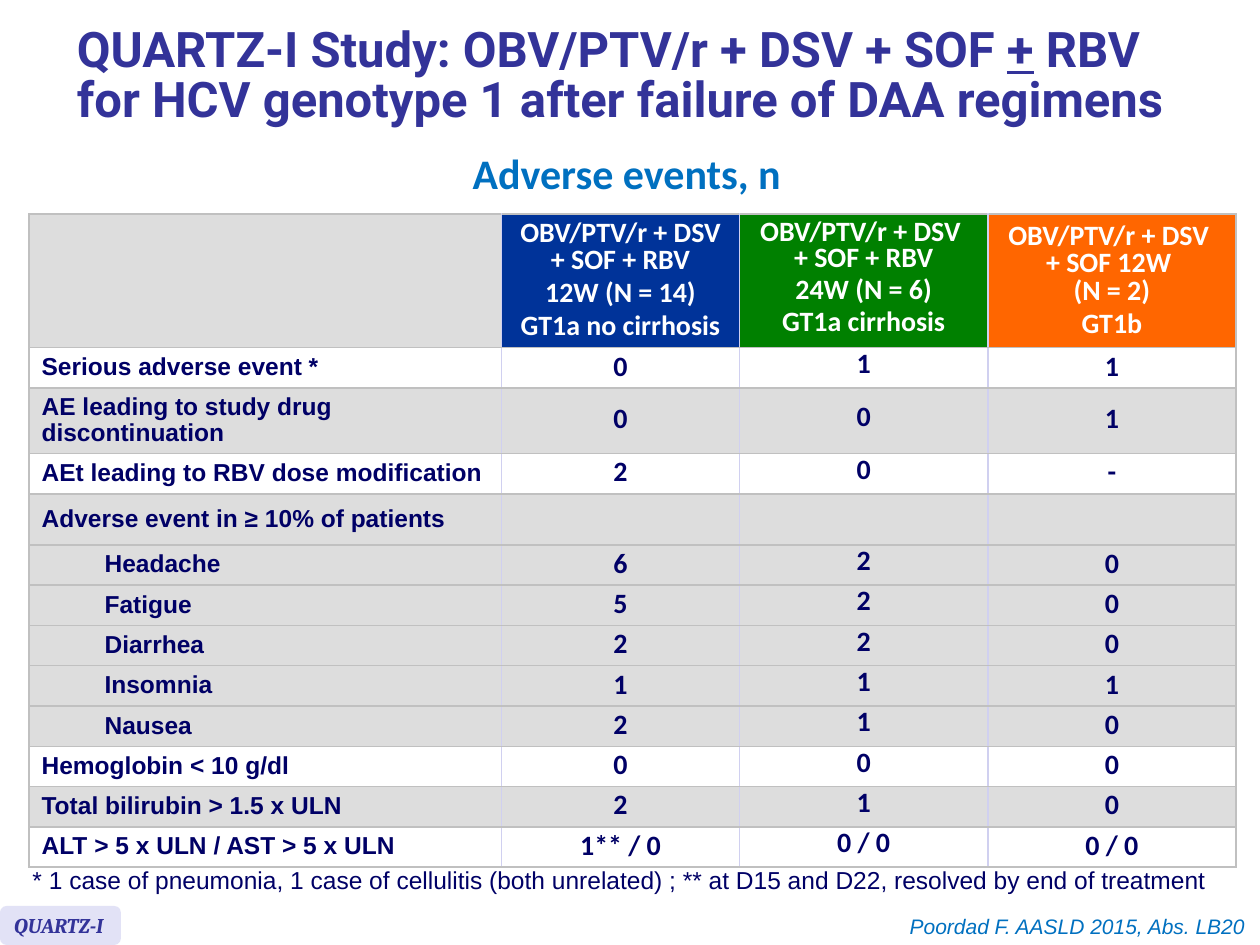
import lxml.etree
import pptx
import pptx.dml.color
import pptx.enum.shapes
import pptx.enum.text
import pptx.oxml.ns
import pptx.util

Inches = pptx.util.Inches
Pt = pptx.util.Pt
RGBColor = pptx.dml.color.RGBColor
ALIGN = pptx.enum.text.PP_ALIGN
MIDDLE = pptx.enum.text.MSO_ANCHOR.MIDDLE

INDIGO = RGBColor(0x33, 0x33, 0x99)
AZURE = RGBColor(0x00, 0x70, 0xC0)
NAVY = RGBColor(0x00, 0x00, 0x66)
WHITE = RGBColor(0xFF, 0xFF, 0xFF)
GREY = RGBColor(0xDD, 0xDD, 0xDD)
BLUE = RGBColor(0x00, 0x33, 0x99)
GREEN = RGBColor(0x00, 0x80, 0x00)
ORANGE = RGBColor(0xFF, 0x66, 0x00)
LILAC = RGBColor(0xE2, 0xE2, 0xF6)
OUTER_RULE = RGBColor(0xC0, 0xC0, 0xC0)
INNER_RULE = RGBColor(0xD0, 0xD0, 0xF0)

COLUMN_WIDTHS = (3.75, 1.89, 1.97, 1.97)
LINE_SPACINGS = (Pt(15), 0.8, Pt(15), 0.8)
ROW_HEIGHT = 0.32
SPECIAL_HEIGHTS = {0: 1.06, 2: 0.52, 4: 0.37}
HEADER_FILLS = (GREY, BLUE, GREEN, ORANGE)
WHITE_ROWS = (1, 3, 10, 12)
SYMPTOM_ROWS = range(5, 10)
ROWS = (
    ("",
     "OBV/PTV/r + DSV + SOF + RBV\n12W (N = 14)\nGT1a no cirrhosis",
     "OBV/PTV/r + DSV \v+ SOF + RBV\n24W (N = 6)\nGT1a cirrhosis",
     "OBV/PTV/r + DSV \v+ SOF 12W \v(N = 2)\nGT1b"),
    ("Serious adverse event *", "0", "1", "1"),
    ("AE leading to study drug discontinuation", "0", "0", "1"),
    ("AEt leading to RBV dose modification", "2", "0", "-"),
    ("Adverse event in ≥ 10% of patients", "", "", ""),
    ("Headache", "6", "2", "0"),
    ("Fatigue", "5", "2", "0"),
    ("Diarrhea", "2", "2", "0"),
    ("Insomnia", "1", "1", "1"),
    ("Nausea", "2", "1", "0"),
    ("Hemoglobin < 10 g/dl", "0", "0", "0"),
    ("Total bilirubin > 1.5 x ULN", "2", "1", "0"),
    ("ALT > 5 x ULN / AST > 5 x ULN", "1** / 0", "0 / 0", "0 / 0"),
)


def format_runs(p, font, size, color, bold=False, italic=False):
    """Apply one character format to every run of a paragraph."""
    for r in p.runs:
        r.font.name = font
        r.font.size = Pt(size)
        r.font.color.rgb = color
        r.font.bold = bold
        r.font.italic = italic


def add_title(s):
    """Fill the title placeholder, underlining the plus-or-minus sign."""
    sp = s.shapes.title
    sp.left, sp.top = Inches(0.51), Inches(0.08)
    sp.width, sp.height = Inches(9.46), Inches(1.07)
    tf = sp.text_frame
    tf.auto_size = pptx.enum.text.MSO_AUTO_SIZE.NONE
    tf.vertical_anchor = MIDDLE
    p = tf.paragraphs[0]
    p.text = "QUARTZ-I Study: OBV/PTV/r + DSV + SOF "
    sign = p.add_run()
    sign.text = "+"
    p.add_run().text = " RBV "
    p.add_line_break()
    p.add_run().text = "for HCV genotype 1 after failure of DAA regimens"
    p.alignment = ALIGN.LEFT
    p.line_spacing = 0.85
    format_runs(p, "Roboto", 28, INDIGO, bold=True)
    sign.font.underline = True


def add_text(s, box, text, size, color, align=ALIGN.LEFT, font="Arial",
             wrap=False, bold=False, italic=False):
    """Add a one-paragraph text box and return its paragraph."""
    tf = s.shapes.add_textbox(*map(Inches, box)).text_frame
    tf.word_wrap = wrap
    tf.text = text
    p = tf.paragraphs[0]
    p.alignment = align
    format_runs(p, font, size, color, bold, italic)
    return p


def add_tag(s):
    """Add the rounded study tag in the lower left corner."""
    sp = s.shapes.add_shape(pptx.enum.shapes.MSO_SHAPE.ROUNDED_RECTANGLE,
                            Inches(0), Inches(7.19), Inches(0.96), Inches(0.31))
    sp.shadow.inherit = False
    sp.fill.solid()
    sp.fill.fore_color.rgb = LILAC
    sp.line.fill.background()
    tf = sp.text_frame
    tf.word_wrap = False
    tf.vertical_anchor = MIDDLE
    tf.text = "QUARTZ-I"
    p = tf.paragraphs[0]
    p.alignment = ALIGN.LEFT
    format_runs(p, "Cambria", 12, INDIGO, bold=True, italic=True)


def set_borders(cell, column):
    """Draw one-point rules, lighter between the columns."""
    last = len(COLUMN_WIDTHS) - 1
    rules = {
        "a:lnL": OUTER_RULE if column == 0 else INNER_RULE,
        "a:lnR": OUTER_RULE if column == last else INNER_RULE,
        "a:lnT": OUTER_RULE,
        "a:lnB": OUTER_RULE,
    }
    qn = pptx.oxml.ns.qn
    tcPr = cell._tc.get_or_add_tcPr()
    for tag, color in rules.items():
        ln = lxml.etree.SubElement(tcPr, qn(tag), w=str(Pt(1)))
        fill = lxml.etree.SubElement(ln, qn("a:solidFill"))
        lxml.etree.SubElement(fill, qn("a:srgbClr"), val=str(color))


def fill_cell(cell, row, column, text):
    """Write and format one table cell."""
    set_borders(cell, column)
    cell.fill.solid()
    if row == 0:
        cell.fill.fore_color.rgb = HEADER_FILLS[column]
    else:
        cell.fill.fore_color.rgb = WHITE if row in WHITE_ROWS else GREY
    cell.vertical_anchor = MIDDLE
    cell.text_frame.text = text
    for i, p in enumerate(cell.text_frame.paragraphs):
        p.alignment = ALIGN.CENTER if column else ALIGN.LEFT
        p.line_spacing = LINE_SPACINGS[column] if text else 0.8
        p.space_before = Pt(3.2 if i else 0)
        if column == 0 and row in SYMPTOM_ROWS:
            p.level = 1
            p._p.get_or_add_pPr().set("marL", str(Inches(0.5)))
        font, size = ("Calibri", 16) if column else ("Arial", 14)
        format_runs(p, font, size, NAVY if row else WHITE, bold=True)


def add_events_table(s):
    """Add the adverse events table."""
    heights = [SPECIAL_HEIGHTS.get(i, ROW_HEIGHT) for i in range(len(ROWS))]
    table = s.shapes.add_table(
        len(ROWS), len(COLUMN_WIDTHS), Inches(0.23), Inches(1.7),
        Inches(sum(COLUMN_WIDTHS)), Inches(sum(heights))).table
    table.first_row = False
    table.horz_banding = False
    for column, width in zip(table.columns, COLUMN_WIDTHS):
        column.width = Inches(width)
    for i, (height, texts) in enumerate(zip(heights, ROWS)):
        table.rows[i].height = Inches(height)
        for j, text in enumerate(texts):
            fill_cell(table.cell(i, j), i, j, text)


def main():
    """Build the adverse events slide."""
    prs = pptx.Presentation()
    prs.slide_width, prs.slide_height = Inches(10), Inches(7.5)
    s = prs.slides.add_slide(prs.slide_layouts[5])
    add_title(s)
    add_events_table(s)
    p = add_text(s, (1.06, 1.31, 7.83, 0.35), "Adverse events, n", 24, AZURE,
                 ALIGN.CENTER, "Calibri", wrap=True, bold=True)
    p.line_spacing = Pt(15.2)
    add_text(s, (7.09, 7.2, 2.89, 0.3), "Poordad F. AASLD 2015, Abs. LB20",
             12, AZURE, ALIGN.RIGHT, italic=True)
    add_tag(s)
    add_text(s, (0.16, 6.82, 9.64, 0.34),
             "* 1 case of pneumonia, 1 case of cellulitis (both unrelated) ; "
             "** at D15 and D22, resolved by end of treatment", 14, NAVY)
    prs.save("out.pptx")


if __name__ == "__main__":
    main()
